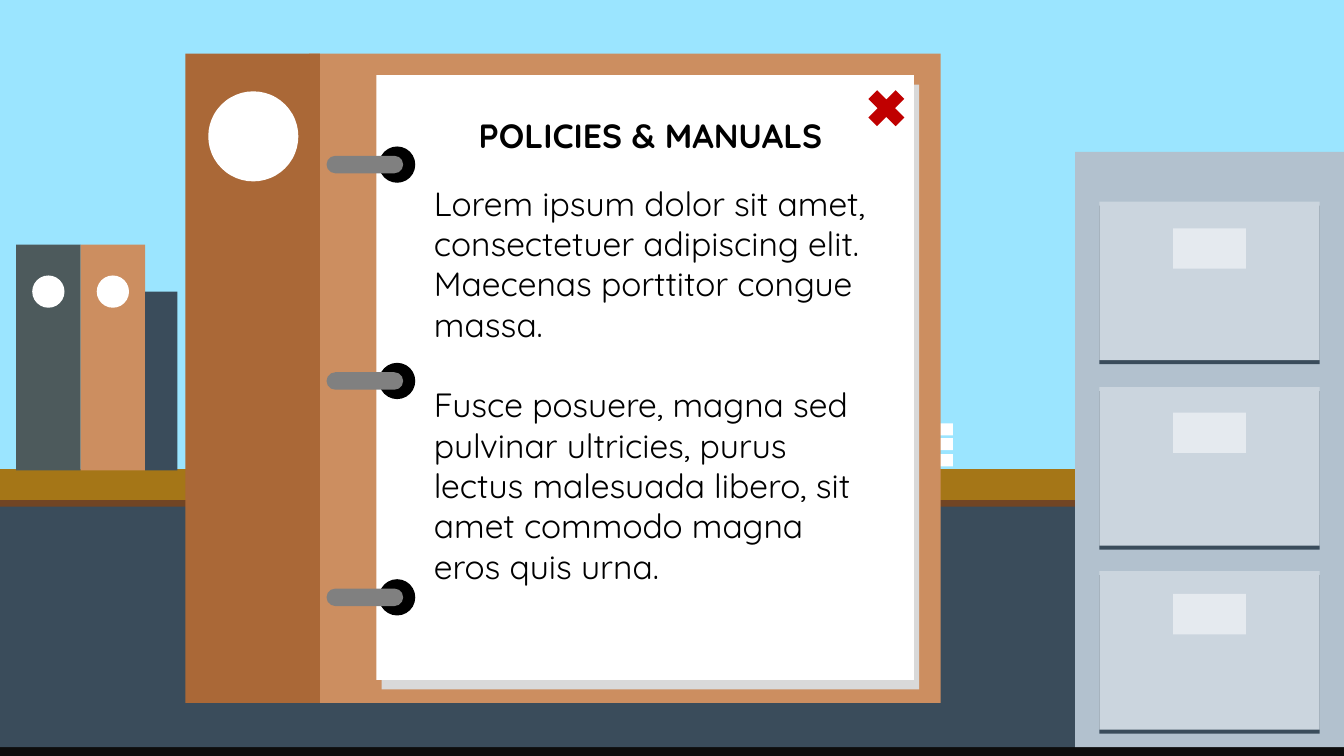
"""Build an office scene with an open binder that shows policies and manuals."""
import pptx
import pptx.dml.color
import pptx.enum.shapes
import pptx.enum.text
import pptx.util

Inches = pptx.util.Inches
Pt = pptx.util.Pt
SHAPES = pptx.enum.shapes.MSO_SHAPE
ALIGN = pptx.enum.text.PP_ALIGN

COLOURS = {
    "backdrop": "DC9E1F", "wall": "9BE5FF", "floor": "0D0D0D",
    "navy": "3A4C5B", "desk_edge": "724524", "desk_top": "A57617",
    "grey_green": "4D5A5C", "tan": "CC8E60", "spine": "AA6837",
    "white": "FFFFFF", "black": "000000", "page_shade": "D9D9D9",
    "ring": "808080", "cabinet": "B2C1CE", "drawer": "CBD5DE",
    "label": "E5EAEF", "cross": "C00000",
}


class Scene:
    """Holds the style and the current slide."""

    font_name = "Quicksand"
    font_size = Pt(18)

    def __init__(self, slide):
        self.slide = slide

    def colour(self, name):
        return pptx.dml.color.RGBColor.from_string(COLOURS[name])

    def background(self, colour):
        fill = self.slide.background.fill
        fill.solid()
        fill.fore_color.rgb = self.colour(colour)

    def shape(self, kind, left, top, width, height, colour):
        shape = self.slide.shapes.add_shape(
            kind, Inches(left), Inches(top), Inches(width), Inches(height))
        shape.shadow.inherit = False
        shape.fill.solid()
        shape.fill.fore_color.rgb = self.colour(colour)
        shape.line.fill.background()
        return shape

    def box(self, left, top, width, height, colour):
        return self.shape(SHAPES.RECTANGLE, left, top, width, height, colour)

    def circle(self, left, top, size, colour):
        return self.shape(SHAPES.OVAL, left, top, size, size, colour)

    def bar(self, left, top, width, height, colour):
        shape = self.shape(SHAPES.ROUNDED_RECTANGLE, left, top, width, height, colour)
        shape.adjustments[0] = 0.5
        return shape

    def text(self, left, top, width, height, wording, align=ALIGN.LEFT, bold=False, gap=0):
        text_box = self.slide.shapes.add_textbox(
            Inches(left), Inches(top), Inches(width), Inches(height))
        text_frame = text_box.text_frame
        text_frame.word_wrap = True
        text_frame.auto_size = pptx.enum.text.MSO_AUTO_SIZE.SHAPE_TO_FIT_TEXT
        text_frame.text = wording
        for index, paragraph in enumerate(text_frame.paragraphs):
            paragraph.alignment = align
            if index:
                paragraph.space_before = Pt(gap)
            for run in paragraph.runs:
                run.font.name = self.font_name
                run.font.size = self.font_size
                run.font.bold = bold
                run.font.color.rgb = self.colour("black")
        return text_box


def draw_room(scene):
    scene.background("backdrop")
    scene.box(0, 0, 10, 5.62, "wall")
    scene.box(0, 5.15, 10, 0.48, "floor")
    scene.box(0, 3.72, 8, 1.84, "navy")
    scene.box(0, 3.5, 8, 0.27, "desk_edge")
    scene.box(0, 3.49, 8, 0.23, "desk_top")


def draw_desk_items(scene):
    for left, colour in ((0.12, "grey_green"), (0.6, "tan")):
        scene.box(left, 1.82, 0.48, 1.68, colour)
        scene.circle(left + 0.12, 2.05, 0.24, "white")
    scene.box(1.08, 2.17, 0.24, 1.33, "navy")
    for top in (3.38, 3.26, 3.15):
        scene.box(5.64, top, 1.45, 0.09, "white")


def draw_cabinet(scene):
    scene.box(8, 1.13, 2, 4.43, "cabinet")
    for drawer_top, label_top in ((1.5, 1.7), (2.88, 3.07), (4.25, 4.42)):
        scene.box(8.18, drawer_top + 0.03, 1.64, 1.18, "navy")
        scene.box(8.18, drawer_top, 1.64, 1.18, "drawer")
        scene.box(8.73, label_top, 0.54, 0.3, "label")


def draw_binder(scene):
    scene.box(2.3, 0.4, 4.7, 4.83, "tan")
    scene.box(2.84, 0.63, 4, 4.5, "page_shade")
    scene.box(1.38, 0.4, 1, 4.83, "spine")
    scene.box(2.8, 0.56, 4, 4.5, "white")
    scene.circle(1.55, 0.68, 0.67, "white")
    for index in range(3):
        hole_top = 1.09 + index * 1.61
        scene.circle(2.82, hole_top, 0.27, "black")
        scene.bar(2.43, hole_top + 0.07, 0.57, 0.13, "ring")


def draw_page(scene):
    scene.text(3.38, 0.81, 2.92, 0.4, "POLICIES & MANUALS", ALIGN.CENTER, bold=True)
    scene.text(
        3.13, 1.31, 3.42, 3.13,
        "Lorem ipsum dolor sit amet, consectetuer adipiscing elit. "
        "Maecenas porttitor congue massa.\n"
        "Fusce posuere, magna sed pulvinar ultricies, purus lectus "
        "malesuada libero, sit amet commodo magna eros quis urna.",
        gap=21.6)
    scene.shape(SHAPES.MATH_MULTIPLY, 6.4, 0.61, 0.39, 0.39, "cross")


def main():
    presentation = pptx.Presentation()
    presentation.slide_width = Inches(10)
    presentation.slide_height = presentation.slide_width * 9 // 16
    scene = Scene(presentation.slides.add_slide(presentation.slide_layouts[6]))
    for draw in (draw_room, draw_desk_items, draw_cabinet, draw_binder, draw_page):
        draw(scene)
    presentation.save("out.pptx")


if __name__ == "__main__":
    main()
